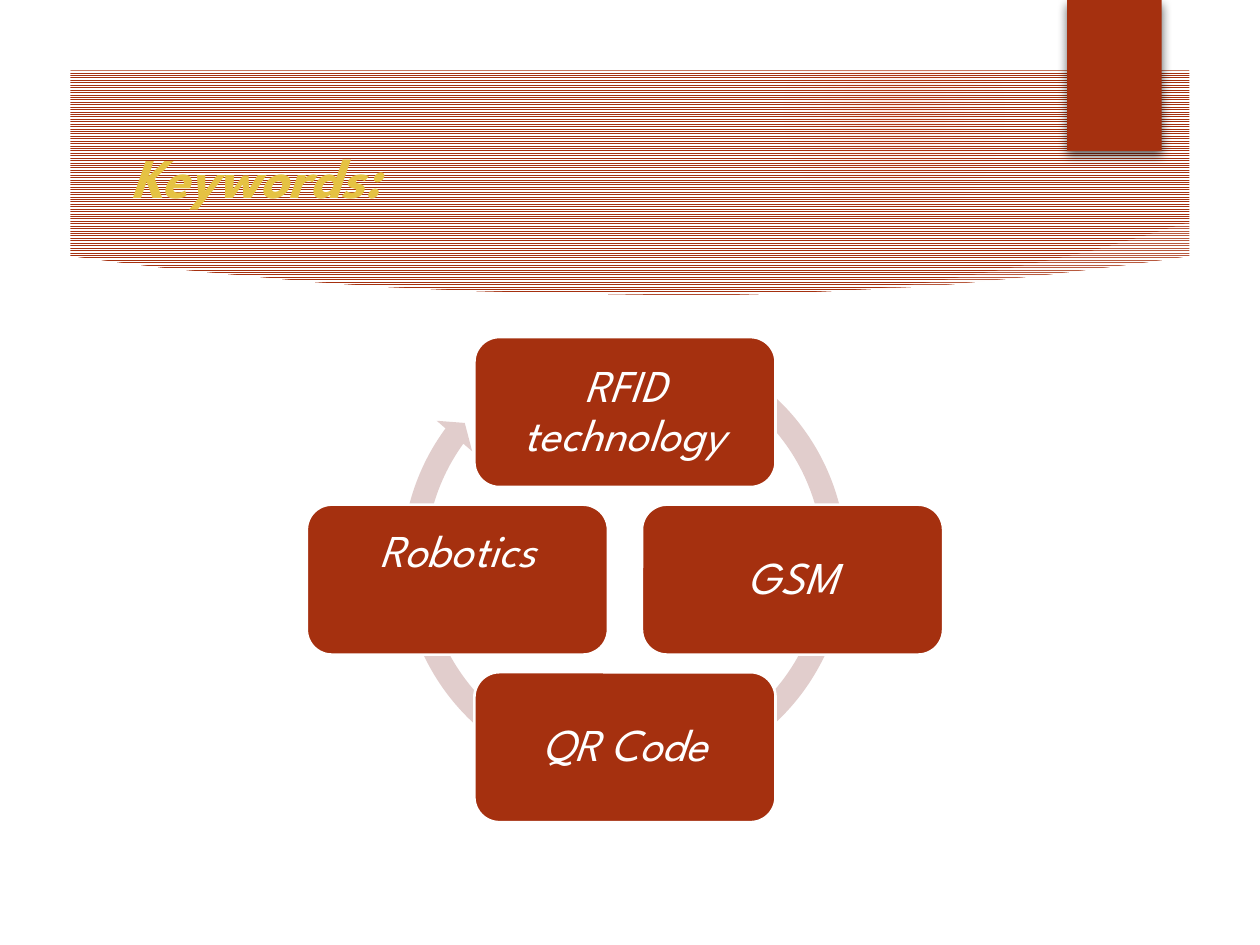
from dataclasses import dataclass

import pptx
import pptx.dml.color
import pptx.enum.dml
import pptx.enum.shapes
import pptx.enum.text
import pptx.oxml
import pptx.oxml.ns
import pptx.util

Inches = pptx.util.Inches
Shape = pptx.enum.shapes.MSO_SHAPE
Align = pptx.enum.text.PP_ALIGN

COLORS = {
    "rust": "A5300F",
    "white": "FFFFFF",
    "gold": "E5C243",
    "arrow": "E1CDCC",
    "glow": "EE6E4A",
    "shadow": "000000",
}
FONT = "League Spartan"
SLIDE_W, SLIDE_H = 10, 7.5
CYCLE_X, CYCLE_Y, CYCLE_STEP = 4.96, 4.6, 1.33
NODE_W, NODE_H = 2.39, 1.19
NODE_INSET = 0.11

# Lower edge of the band, right to left
BAND_CURVE = [
    (9.47, 2.03), (9.06, 2.09), (8.66, 2.14), (8.25, 2.19), (7.85, 2.23),
    (7.44, 2.27), (7.04, 2.29), (6.64, 2.31), (6.25, 2.33), (5.87, 2.34),
    (5.11, 2.34), (4.39, 2.33), (3.71, 2.31), (3.07, 2.28), (2.49, 2.24),
    (1.73, 2.17), (1.32, 2.13), (0.99, 2.09), (0.53, 2.03),
]
BODY = BAND_CURVE + [(0.53, 6.99), (9.47, 6.99)]
SHEEN = [
    (6.96, 2.29), (7.39, 2.24), (7.85, 2.16), (8.26, 2.08), (8.67, 1.99),
    (9.09, 1.87), (9.51, 1.74), (9.56, 2.08), (8.8, 2.2), (7.9, 2.31),
    (6.99, 2.34),
]


@dataclass(frozen=True)
class Glow:
    left: float
    top: float
    size: float
    stops: tuple[tuple[int, int], ...]  # position %, opacity %


@dataclass(frozen=True)
class Node:
    label: str
    column: int
    row: int
    lift: float = 0  # extra bottom inset that raises the label


GLOWS = [
    Glow(6.89, 1.83, 3.08, ((0, 7), (36, 6), (69, 0))),
    Glow(6.22, 0.01, 1.75, ((0, 14), (36, 7), (73, 0))),
]
NODES = [
    Node("RFID technology", 0, -1),
    Node("GSM", 1, 0),
    Node("QR Code", 0, 1),
    Node("Robotics", -1, 0, lift=0.43),
]


def rgb(name: str) -> pptx.dml.color.RGBColor:
    return pptx.dml.color.RGBColor.from_string(COLORS[name])


def xml(markup: str):
    return pptx.oxml.parse_xml(markup.replace(">", f" {pptx.oxml.ns.nsdecls('a')}>", 1))


def paint(shape, color: str) -> None:
    shape.shadow.inherit = False
    shape.fill.solid()
    shape.fill.fore_color.rgb = rgb(color)
    shape.line.fill.background()


def add_preset(slide, kind, left: float, top: float, width: float, height: float, color: str):
    shape = slide.shapes.add_shape(
        kind, Inches(left), Inches(top), Inches(width), Inches(height))
    paint(shape, color)
    return shape


def add_outline(slide, points: list[tuple[float, float]], color: str):
    # The builder rounds to whole units, so it is given lengths in EMU
    corners = [(Inches(x), Inches(y)) for x, y in points]
    builder = slide.shapes.build_freeform(*corners[0])
    builder.add_line_segments(corners[1:], close=True)
    shape = builder.convert_to_shape()
    paint(shape, color)
    return shape


def add_glow(slide, glow: Glow) -> None:
    shape = add_preset(slide, Shape.OVAL, glow.left, glow.top, glow.size, glow.size, "glow")
    stops = "".join(
        f'<a:gs pos="{position * 1000}"><a:srgbClr val="{COLORS["glow"]}">'
        f'<a:alpha val="{opacity * 1000}"/></a:srgbClr></a:gs>'
        for position, opacity in glow.stops)
    gradient = xml(
        f'<a:gradFill><a:gsLst>{stops}</a:gsLst><a:path path="circle">'
        '<a:fillToRect l="50000" t="50000" r="50000" b="50000"/></a:path></a:gradFill>')
    properties = shape._element.spPr
    properties.replace(properties.find(pptx.oxml.ns.qn("a:solidFill")), gradient)


def style_text(frame, size: float, color: str, align, bold: bool = False) -> None:
    frame.word_wrap = True
    frame.vertical_anchor = pptx.enum.text.MSO_ANCHOR.MIDDLE
    paragraph = frame.paragraphs[0]
    paragraph.alignment = align
    for run in paragraph.runs:
        run.font.name = FONT
        run.font.size = pptx.util.Pt(size)
        run.font.bold = bold
        run.font.italic = True
        run.font.color.rgb = rgb(color)


def add_node(slide, node: Node) -> None:
    box = add_preset(
        slide, Shape.ROUNDED_RECTANGLE,
        CYCLE_X + node.column * CYCLE_STEP - NODE_W / 2,
        CYCLE_Y + node.row * CYCLE_STEP - NODE_H / 2,
        NODE_W, NODE_H, "rust")
    box.line.color.rgb = rgb("white")
    box.line.width = pptx.util.Pt(1.5)
    frame = box.text_frame
    frame.margin_left = frame.margin_right = frame.margin_top = Inches(NODE_INSET)
    frame.margin_bottom = Inches(NODE_INSET + node.lift)
    frame.text = node.label
    frame.paragraphs[0].line_spacing = 0.9
    style_text(frame, 26, "white", Align.CENTER)


def main() -> None:
    deck = pptx.Presentation()
    deck.slide_width, deck.slide_height = Inches(SLIDE_W), Inches(SLIDE_H)
    slide = deck.slides.add_slide(deck.slide_layouts.get_by_name("Title Only"))

    # Striped background
    stripes = slide.background.fill
    stripes.patterned()
    stripes.pattern = pptx.enum.dml.MSO_PATTERN.NARROW_HORIZONTAL
    stripes.fore_color.rgb = rgb("rust")
    stripes.back_color.rgb = rgb("white")

    # Glows and sheen over the band, then the white body and border
    for glow in GLOWS:
        add_glow(slide, glow)
    sheen = add_outline(slide, SHEEN, "white")
    sheen_color = sheen._element.spPr.find(".//" + pptx.oxml.ns.qn("a:srgbClr"))
    sheen_color.append(xml('<a:alpha val="20000"></a:alpha>'))
    add_outline(slide, BODY, "white")
    border = add_preset(slide, Shape.FRAME, 0, 0, SLIDE_W, SLIDE_H, "white")
    border.adjustments[0] = 0.56 / SLIDE_H

    # Bookmark tab
    tab = add_preset(slide, Shape.RECTANGLE, 8.47, 0, 0.75, 1.2, "rust")
    effects = tab._element.spPr.find(pptx.oxml.ns.qn("a:effectLst"))
    effects.append(xml(
        f'<a:outerShdw blurRad="{pptx.util.Pt(6)}" dist="{pptx.util.Pt(3)}" dir="5400000">'
        f'<a:srgbClr val="{COLORS["shadow"]}"><a:alpha val="60000"/></a:srgbClr></a:outerShdw>'))

    # Title, brought in front of the backdrop
    title = slide.shapes.title
    title.left, title.top = Inches(0.94), Inches(1.01)
    title.width, title.height = Inches(6.94), Inches(0.78)
    title.text_frame.text = "Keywords:"
    style_text(title.text_frame, 32, "gold", Align.LEFT, bold=True)
    slide.shapes._spTree.append(title._element)

    # Keyword cycle
    arrow = add_preset(slide, Shape.CIRCULAR_ARROW, 3.1, 2.59, 3.71, 3.71, "arrow")
    for index, value in enumerate((0.05, 2.73, 129.68, 179.39, 0.05)):
        arrow.adjustments[index] = value
    for node in NODES:
        add_node(slide, node)

    deck.save("out.pptx")


if __name__ == "__main__":
    main()
